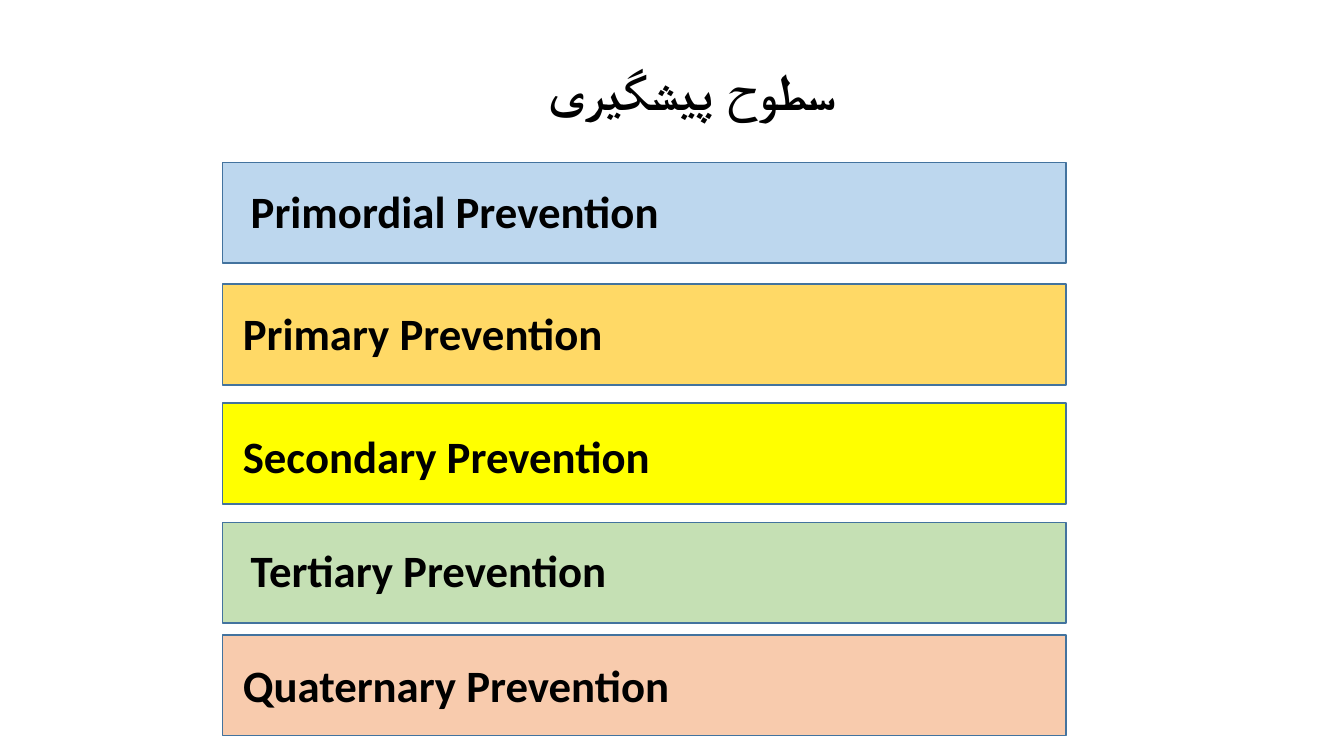
"""Build a slide that lists the five levels of prevention."""
from pptx import Presentation
from pptx.dml.color import RGBColor
from pptx.enum.shapes import MSO_SHAPE
from pptx.enum.text import MSO_ANCHOR, MSO_AUTO_SIZE, PP_ALIGN
from pptx.util import Cm, Pt

RECT = MSO_SHAPE.RECTANGLE
TOP = MSO_ANCHOR.TOP
GROW = MSO_AUTO_SIZE.SHAPE_TO_FIT_TEXT
LEFT, CENTER = PP_ALIGN.LEFT, PP_ALIGN.CENTER

FONT = "Calibri"
BLACK, EDGE = "000000", "43739E"
TITLE = "سطوح پیشگیری "
BAR_X, BAR_W, BAR_H = 5.61, 21.26, 2.54
TEXT_W, TEXT_H = 20.0, 1.63

# label, fill, bar top, text left, text top
LEVELS = [
    ("Primordial Prevention", "BDD7EE", 4.09, 6.07, 4.5),
    ("Primary Prevention", "FFD966", 7.16, 5.87, 7.59),
    ("Secondary Prevention", "FFFF00", 10.16, 5.87, 10.69),
    ("Tertiary Prevention", "C5E0B4", 13.16, 6.07, 13.54),
    ("Quaternary Prevention", "F8CBAD", 16.0, 5.87, 16.46),
]


def color(code):
    return RGBColor.from_string(code)


def write(shape, text, size, align):
    frame = shape.text_frame
    frame.word_wrap = True
    frame.auto_size = GROW
    frame.vertical_anchor = TOP
    para = frame.paragraphs[0]
    para.alignment = align
    run = para.add_run()
    run.text = text
    font = run.font
    font.name, font.size, font.bold = FONT, Pt(size), True
    font.color.rgb = color(BLACK)
    return para


def add_bar(slide, fill, top):
    bar = slide.shapes.add_shape(RECT, Cm(BAR_X), Cm(top), Cm(BAR_W), Cm(BAR_H))
    bar.shadow.inherit = False
    bar.fill.solid()
    bar.fill.fore_color.rgb = color(fill)
    bar.line.color.rgb = color(EDGE)
    bar.line.width = Pt(1)


def main():
    deck = Presentation()
    deck.slide_width, deck.slide_height = Cm(33.87), Cm(19.05)
    slide = deck.slides.add_slide(deck.slide_layouts[5])

    title = slide.shapes.title
    title.left, title.top = Cm(6.53), Cm(1.4)
    title.width, title.height = Cm(21.51), Cm(1.8)
    para = write(title, TITLE, 36, CENTER)
    para._p.get_or_add_pPr().set("rtl", "1")

    for label, fill, top, text_x, text_y in LEVELS:
        add_bar(slide, fill, top)
        box = slide.shapes.add_textbox(Cm(text_x), Cm(text_y), Cm(TEXT_W), Cm(TEXT_H))
        write(box, label, 32, LEFT)

    deck.save("out.pptx")


if __name__ == "__main__":
    main()
